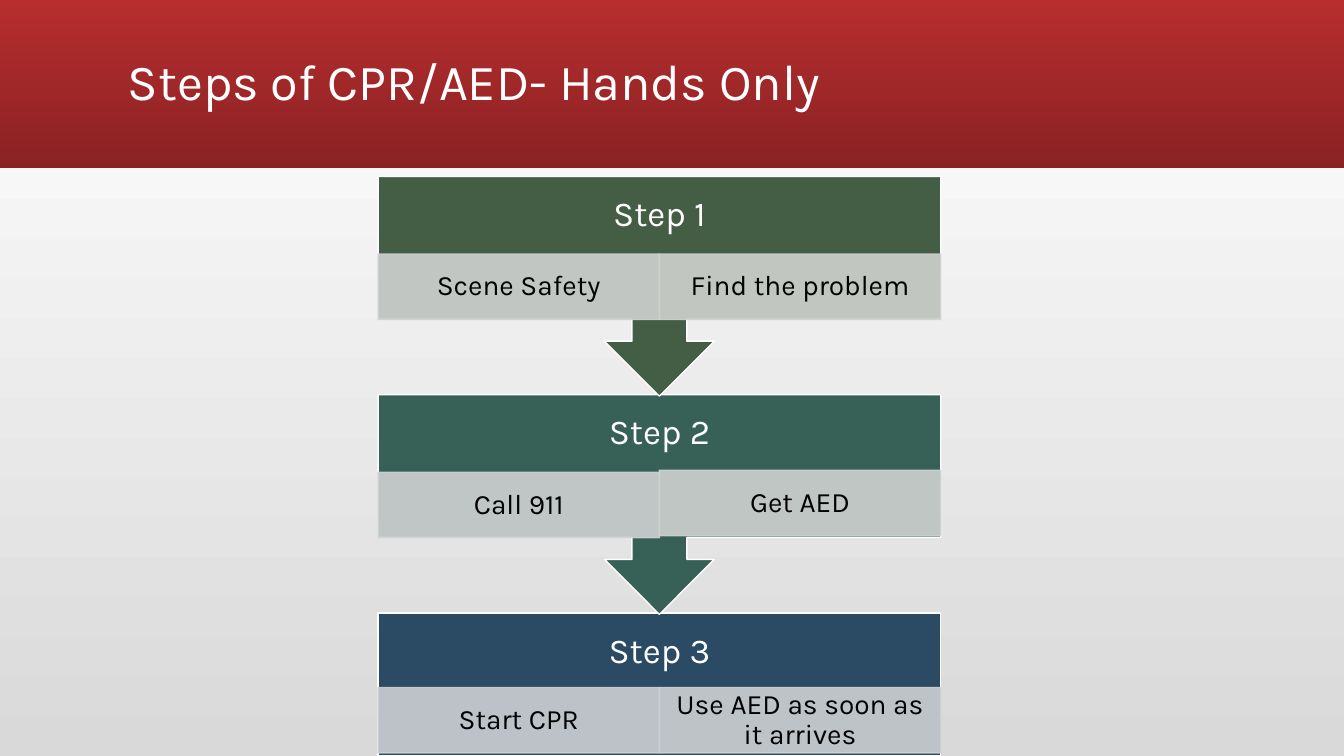
from lxml import etree
from pptx import Presentation
from pptx.dml.color import RGBColor
from pptx.enum.shapes import MSO_SHAPE
from pptx.enum.text import MSO_ANCHOR, PP_ALIGN
from pptx.oxml.ns import qn
from pptx.util import Inches, Pt

RECTANGLE = MSO_SHAPE.RECTANGLE
ARROW_CALLOUT = MSO_SHAPE.DOWN_ARROW_CALLOUT
MIDDLE = MSO_ANCHOR.MIDDLE
LEFT, CENTER = PP_ALIGN.LEFT, PP_ALIGN.CENTER

FONT = "Karla"
SLIDE_W, SLIDE_H = 13.33, 7.5
STEP_W, STEP_H, CALLOUT_H = 5.58, 1.42, 2.18
ACTION_H = 0.65
STEP_PITCH = 2.165
UPWARD, DOWNWARD = 90, 270

COLORS = {
    "white": "FFFFFF",
    "black": "000000",
    "backdrop": "D9D9D9",
    "banner_top": "B82D2F",
    "banner_bottom": "8A2223",
    "green": "445E45",
    "teal": "376156",
    "blue": "2B4A63",
    "green_tint_1": "CFD2D0",
    "green_tint_2": "CFD2CF",
    "teal_tint_1": "CED2D2",
    "teal_tint_2": "CED2D1",
    "blue_tint_1": "CDD0D3",
    "blue_tint_2": "CED1D3",
}

STEPS = [
    ("Step 1", ARROW_CALLOUT, CALLOUT_H, "green",
     [("Scene Safety", "green_tint_1", 0.77), ("Find the problem", "green_tint_2", 0.77)]),
    ("Step 2", ARROW_CALLOUT, CALLOUT_H, "teal",
     [("Call 911", "teal_tint_1", 0.77), ("Get AED", "teal_tint_2", 0.75)]),
    ("Step 3", RECTANGLE, STEP_H, "blue",
     [("Start CPR", "blue_tint_1", 0.74), ("Use AED as soon as it arrives", "blue_tint_2", 0.74)]),
]


def rgb(name):
    """Return the named colour."""
    return RGBColor.from_string(COLORS[name])


def set_gradient(fill, angle, start, end):
    """Fill with a two-colour linear gradient."""
    fill.gradient()
    fill.gradient_angle = angle
    for stop, position, name in zip(fill.gradient_stops, (0, 1), (start, end)):
        stop.position = position
        stop.color.rgb = rgb(name)


def add_block(slide, preset, box, color, line=None, alpha=None):
    """Add a filled and outlined shape, optionally translucent."""
    block = slide.shapes.add_shape(preset, *map(Inches, box))
    block.shadow.inherit = False
    block.fill.solid()
    block.fill.fore_color.rgb = rgb(color)
    block.line.color.rgb = rgb(line or color)
    block.line.width = Pt(1)
    if alpha:
        for tone in block.fill._xPr.iter(qn("a:srgbClr")):
            etree.SubElement(tone, qn("a:alpha")).set("val", str(alpha * 1000))
    return block


def write(shape, text, size, color, insets, align=CENTER):
    """Set one vertically centred paragraph inside the insets."""
    frame = shape.text_frame
    frame.word_wrap = True
    frame.vertical_anchor = MIDDLE
    (frame.margin_left, frame.margin_top,
     frame.margin_right, frame.margin_bottom) = map(Inches, insets)
    frame.text = text
    paragraph = frame.paragraphs[0]
    paragraph.alignment = align
    paragraph.line_spacing = 0.9
    font = paragraph.runs[0].font
    font.name = FONT
    font.size = Pt(size)
    font.color.rgb = rgb(color)


def add_banner(slide, left, top, width, height):
    """Draw the title banner across the top."""
    banner = slide.shapes.add_shape(RECTANGLE, *map(Inches, (left, top, width, height)))
    banner.shadow.inherit = False
    banner.line.fill.background()
    set_gradient(banner.fill, DOWNWARD, "banner_top", "banner_bottom")
    title = slide.shapes.add_textbox(
        Inches(left + 1.17), Inches(top + 0.11), Inches(11), Inches(1.45))
    write(title, "Steps of CPR/AED- Hands Only", 36, "white", (0.1, 0.05, 0.1, 0.05), LEFT)


def add_step(slide, left, top, width, step):
    """Draw one step with its heading and a row of actions."""
    heading, preset, height, color, actions = step
    block = add_block(slide, preset, (left, top, width, height), color, "white")
    write(block, heading, 25, "white", (0.19, 0, 0.19, ACTION_H))
    action_w = width / len(actions)
    for column, (text, tint, offset) in enumerate(actions):
        box = (left + column * action_w, top + offset, action_w, ACTION_H)
        action = add_block(slide, RECTANGLE, box, tint, alpha=90)
        write(action, text, 20, "black", (0.16, 0.03, 0.16, 0.03))


def add_steps(slide, left, top, width):
    """Stack the steps, each arrow lying over the step below."""
    for row, step in reversed(list(enumerate(STEPS))):
        add_step(slide, left, top + row * STEP_PITCH, width, step)


def main():
    """Build and save the slide."""
    deck = Presentation()
    deck.slide_width, deck.slide_height = Inches(SLIDE_W), Inches(SLIDE_H)
    slide = deck.slides.add_slide(deck.slide_layouts[6])
    set_gradient(slide.background.fill, UPWARD, "backdrop", "white")
    add_banner(slide, 0, 0, SLIDE_W, 1.67)
    add_steps(slide, 3.75, 1.75, STEP_W)
    deck.save("out.pptx")


if __name__ == "__main__":
    main()
